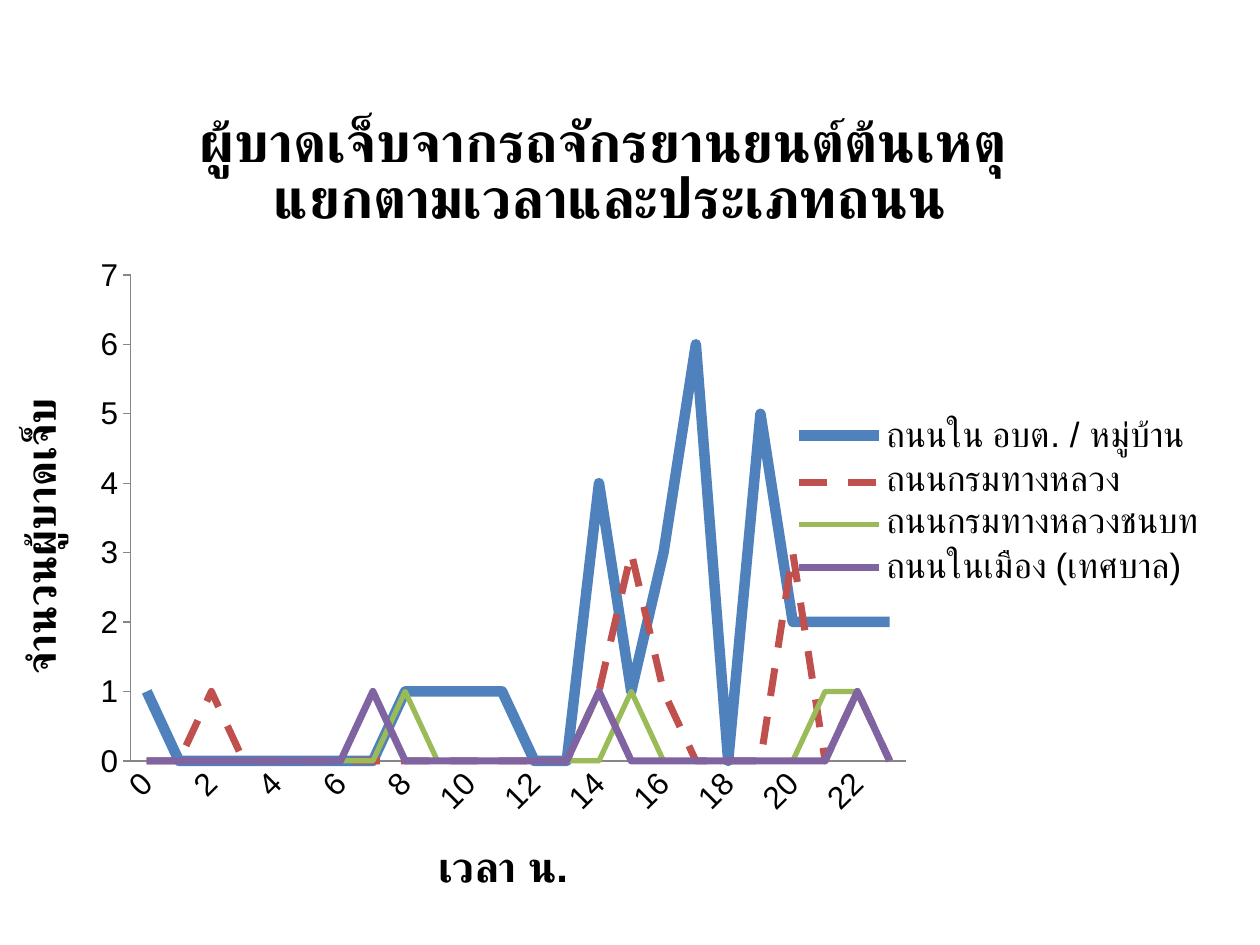
from dataclasses import dataclass

from lxml import etree
from pptx import Presentation
from pptx import util as u
from pptx.chart.data import CategoryChartData
from pptx.dml.color import RGBColor
from pptx.enum import chart as ch
from pptx.enum.dml import MSO_LINE
from pptx.oxml.ns import qn


@dataclass(frozen=True)
class Theme:
    font: str = "Arial"
    ink: str = "000000"
    axis: str = "868686"
    blue: str = "4F81BD"
    red: str = "C0504D"
    green: str = "9BBB59"
    violet: str = "8064A2"
    head: int = 32
    label: int = 24
    key: int = 20
    base: int = 18


THEME = Theme()
HEAD = ["ผู้บาดเจ็บจากรถจักรยานยนต์ต้นเหตุ ", "แยกตามเวลาและประเภทถนน"]

# Road type, injured per hour, colour, line width, dash
ROADS = [
    ("ถนนใน อบต. / หมู่บ้าน",
     [1, 0, 0, 0, 0, 0, 0, 0, 1, 1, 1, 1, 0, 0, 4, 1, 3, 6, 0, 5, 2, 2, 2, 2],
     THEME.blue, 6, None),
    ("ถนนกรมทางหลวง",
     [0, 0, 1, 0, 0, 0, 0, 0, 0, 0, 0, 0, 0, 0, 1, 3, 1, 0, 0, 0, 3, 0, 1, 0],
     THEME.red, 4, MSO_LINE.DASH),
    ("ถนนกรมทางหลวงชนบท",
     [0, 0, 0, 0, 0, 0, 0, 0, 1, 0, 0, 0, 0, 0, 0, 1, 0, 0, 0, 0, 0, 1, 1, 0],
     THEME.green, 3, None),
    ("ถนนในเมือง (เทศบาล)",
     [0, 0, 0, 0, 0, 0, 0, 1, 0, 0, 0, 0, 0, 0, 1, 0, 0, 0, 0, 0, 0, 0, 1, 0],
     THEME.violet, 4, None),
]


class Deck:
    def __init__(self, theme):
        self.theme = theme
        self.prs = Presentation()
        self.prs.slide_width = u.Inches(10)
        self.prs.slide_height = u.Inches(7.5)
        self.slide = self.prs.slides.add_slide(self.prs.slide_layouts[6])

    def style(self, font, size, bold=False):
        font.name = self.theme.font
        font.size = u.Pt(size)
        font.bold = bold
        font.color.rgb = RGBColor.from_string(self.theme.ink)

    def title(self, frame, lines, size):
        for i, line in enumerate(lines):
            para = frame.add_paragraph() if i else frame.paragraphs[0]
            para.text = line
            self.style(para.font, size, bold=True)

    def axis(self, axis, name, tick):
        axis.has_major_gridlines = False
        axis.major_tick_mark = tick
        axis.minor_tick_mark = ch.XL_TICK_MARK.NONE
        axis.format.line.color.rgb = RGBColor.from_string(self.theme.axis)
        self.style(axis.tick_labels.font, self.theme.base)
        self.title(axis.axis_title.text_frame, [name], self.theme.label)

    def plot_area(self, chart, x, y, w, h):
        area = chart.plots[0]._element.getparent()
        for old in area.findall(qn("c:layout")):
            area.remove(old)
        layout = etree.Element(qn("c:layout"))
        box = etree.SubElement(layout, qn("c:manualLayout"))
        parts = dict(layoutTarget="inner", xMode="edge", yMode="edge",
                     x=x, y=y, w=w, h=h)
        for tag, val in parts.items():
            etree.SubElement(box, qn("c:" + tag)).set("val", str(val))
        area.insert(0, layout)

    def lines(self, left, top, width, height, cats, roads):
        data = CategoryChartData(number_format="General")
        data.categories = cats
        for name, vals, *_ in roads:
            data.add_series(name, vals)
        chart = self.slide.shapes.add_chart(
            ch.XL_CHART_TYPE.LINE, *map(u.Inches, (left, top, width, height)),
            data).chart
        self.style(chart.font, self.theme.base)
        chart.plots[0].vary_by_categories = False

        # Lines
        for line, (_, _, color, weight, dash) in zip(chart.plots[0].series, roads):
            line.smooth = False
            line.marker.style = ch.XL_MARKER_STYLE.NONE
            stroke = line.format.line
            stroke.color.rgb = RGBColor.from_string(color)
            stroke.width = u.Pt(weight)
            if dash:
                stroke.dash_style = dash
        return chart

    def legend(self, chart):
        chart.has_legend = True
        chart.legend.position = ch.XL_LEGEND_POSITION.RIGHT
        chart.legend.include_in_layout = False
        self.style(chart.legend.font, self.theme.key)

    def save(self):
        self.prs.save("out.pptx")


def main():
    deck = Deck(THEME)

    # Injuries by hour and road type
    chart = deck.lines(0, 0.7, 9.69, 6.56, [str(h) for h in range(24)], ROADS)
    deck.title(chart.chart_title.text_frame, HEAD, THEME.head)
    deck.legend(chart)
    deck.plot_area(chart, 0.107, 0.226, 0.635, 0.588)

    # Hours axis: slanted, every second label
    hours = chart.category_axis
    deck.axis(hours, "เวลา น.", ch.XL_TICK_MARK.NONE)
    hours._element.find(qn("c:txPr")).find(qn("a:bodyPr")).set("rot", "-2700000")
    skip = etree.Element(qn("c:tickLblSkip"))
    skip.set("val", "2")
    hours._element.find(qn("c:noMultiLvlLbl")).addprevious(skip)

    # Count axis: upright title
    count = chart.value_axis
    deck.axis(count, "จำนวนผู้บาดเจ็บ", ch.XL_TICK_MARK.OUTSIDE)
    count.minimum_scale, count.maximum_scale, count.major_unit = 0, 7, 1
    body = count.axis_title.text_frame._txBody.find(qn("a:bodyPr"))
    body.set("rot", "-5400000")
    body.set("vert", "horz")

    deck.save()


if __name__ == "__main__":
    main()
